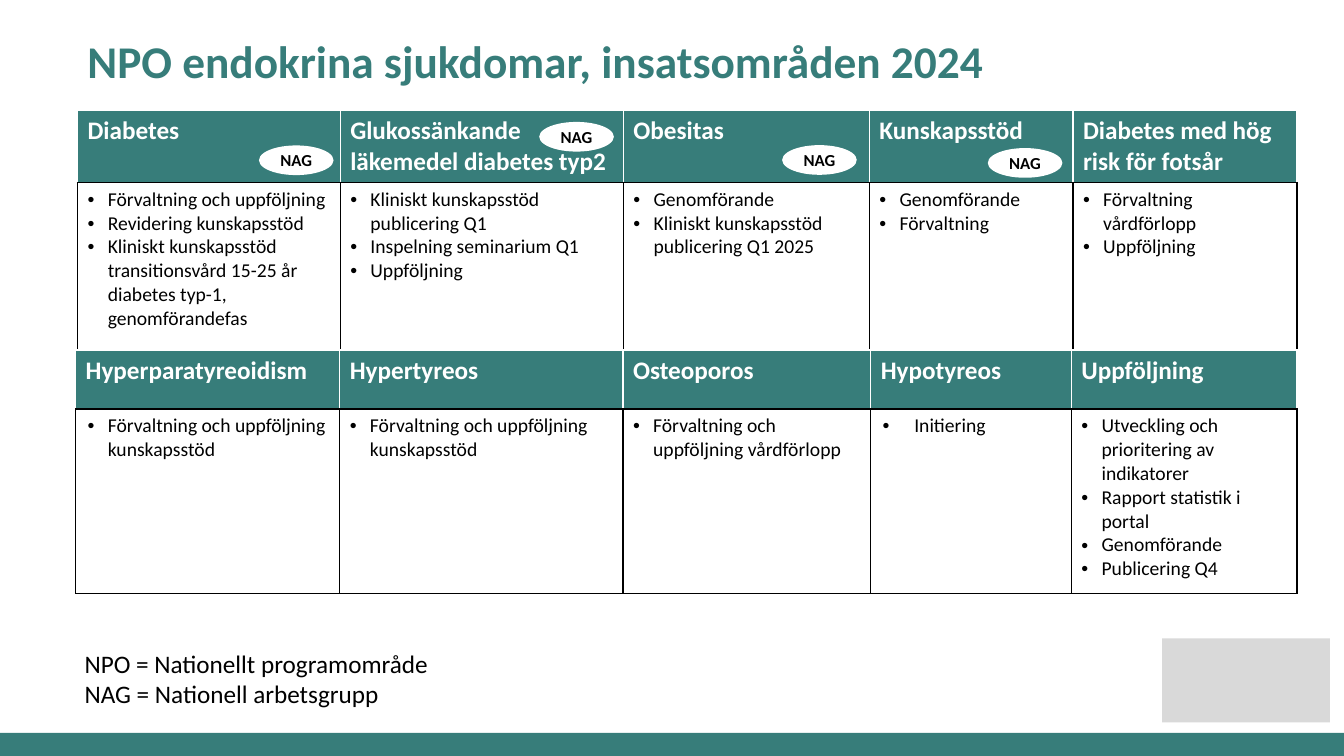
from lxml import etree
from pptx import Presentation
from pptx.dml.color import RGBColor
from pptx.enum.shapes import MSO_SHAPE
from pptx.enum.text import MSO_ANCHOR, PP_ALIGN
from pptx.oxml.ns import qn
from pptx.util import Pt

RECTANGLE, ELLIPSE = MSO_SHAPE.RECTANGLE, MSO_SHAPE.OVAL
MIDDLE, BOTTOM = MSO_ANCHOR.MIDDLE, MSO_ANCHOR.BOTTOM
CENTER = PP_ALIGN.CENTER

FONT = "Calibri"
COLORS = {"teal": "377D7A", "white": "FFFFFF", "black": "000000", "grey": "D9D9D9"}
HEADER_BORDERS = {"L": "white", "R": "white", "T": "white", "B": "black"}
BODY_BORDERS = dict.fromkeys("LRTB", "black")

FORMATS = {
    "title": {"size": Pt(32.4), "bold": True},
    "header": {"size": Pt(18), "bold": True},
    "body": {"size": Pt(14), "bold": False},
    "badge": {"size": Pt(12), "bold": True},
    "legend": {"size": Pt(18), "bold": False},
}

CURRENT_AREAS = {
    "Diabetes": [
        "Förvaltning och uppföljning",
        "Revidering kunskapsstöd",
        "Kliniskt kunskapsstöd transitionsvård 15-25 år diabetes typ-1, genomförandefas",
    ],
    "Glukossänkande läkemedel diabetes typ2": [
        "Kliniskt kunskapsstöd publicering Q1",
        "Inspelning seminarium Q1",
        "Uppföljning",
    ],
    "Obesitas": ["Genomförande", "Kliniskt kunskapsstöd publicering Q1 2025"],
    "Kunskapsstöd": ["Genomförande", "Förvaltning"],
    "Diabetes med hög risk för fotsår": ["Förvaltning vårdförlopp", "Uppföljning"],
}
FURTHER_AREAS = {
    "Hyperparatyreoidism": ["Förvaltning och uppföljning kunskapsstöd"],
    "Hypertyreos": ["Förvaltning och uppföljning kunskapsstöd"],
    "Osteoporos": ["Förvaltning och uppföljning vårdförlopp"],
    "Hypotyreos": ["Initiering"],
    "Uppföljning": [
        "Utveckling och prioritering av indikatorer",
        "Rapport statistik i portal",
        "Genomförande",
        "Publicering Q4",
    ],
}
BADGES = [(385.2, 87.1), (185, 103.9), (558.7, 103.7), (705.6, 105.8)]


def rgb(color):
    """Return the named colour as an RGB value."""
    return RGBColor.from_string(COLORS[color])


def add_bullet(paragraph, indent):
    """Give the paragraph a bullet with a hanging indent in points."""
    properties = paragraph._p.get_or_add_pPr()
    properties.set("marL", str(Pt(indent)))
    properties.set("indent", str(-Pt(indent)))
    etree.SubElement(properties, qn("a:buFont"), typeface="Arial")
    etree.SubElement(properties, qn("a:buChar"), char="•")


def write_lines(text_frame, lines, style, color, indent=0, **paragraph_format):
    """Write one formatted paragraph for each line."""
    for index, line in enumerate(lines):
        paragraph = text_frame.add_paragraph() if index else text_frame.paragraphs[0]
        if indent:
            add_bullet(paragraph, indent)
        for name, value in paragraph_format.items():
            setattr(paragraph, name, value)
        run = paragraph.add_run()
        run.text = line
        for name, value in {"name": FONT, **FORMATS[style]}.items():
            setattr(run.font, name, value)
        run.font.color.rgb = rgb(color)


def add_text(slide, box, lines, style, color, frame_format, **paragraph_format):
    """Add a text box."""
    text_frame = slide.shapes.add_textbox(*map(Pt, box)).text_frame
    for name, value in frame_format.items():
        setattr(text_frame, name, value)
    write_lines(text_frame, lines, style, color, **paragraph_format)


def add_plain_shape(slide, kind, box, color):
    """Add a filled shape without outline or shadow."""
    shape = slide.shapes.add_shape(kind, *map(Pt, box))
    shape.shadow.inherit = False
    shape.fill.solid()
    shape.fill.fore_color.rgb = rgb(color)
    shape.line.fill.background()
    return shape


def add_badge(slide, left, top):
    """Add an oval that marks an area with a working group."""
    badge = add_plain_shape(slide, ELLIPSE, (left, top, 53.3, 21.2), "white")
    badge.text_frame.word_wrap = False
    badge.text_frame.vertical_anchor = MIDDLE
    write_lines(badge.text_frame, ["NAG"], "badge", "black", alignment=CENTER)


def set_borders(cell, borders):
    """Draw the cell's borders, one point wide."""
    properties = cell._tc.get_or_add_tcPr()
    for side, color in borders.items():
        line = etree.SubElement(properties, qn(f"a:ln{side}"), w=str(Pt(1)))
        fill = etree.SubElement(line, qn("a:solidFill"))
        etree.SubElement(fill, qn("a:srgbClr"), val=COLORS[color])


def add_area_table(slide, left, top, widths, heights, areas, indents, wide_margins=()):
    """Add a table with a heading and a bullet list for each area."""
    box = map(Pt, (left, top, sum(widths), sum(heights)))
    table = slide.shapes.add_table(2, len(areas), *box).table
    table.horz_banding = False
    for row, height in zip(table.rows, heights):
        row.height = Pt(height)
    for index, (heading, tasks) in enumerate(areas.items()):
        table.columns[index].width = Pt(widths[index])
        header, body = table.cell(0, index), table.cell(1, index)
        set_borders(header, HEADER_BORDERS)
        header.fill.solid()
        header.fill.fore_color.rgb = rgb("teal")
        write_lines(header.text_frame, [heading], "header", "white")
        set_borders(body, BODY_BORDERS)
        body.fill.background()
        if index in wide_margins:
            body.margin_left = Pt(8.6)
        write_lines(body.text_frame, tasks, "body", "black", indent=indents[index])


def main():
    """Build the slide and save it."""
    presentation = Presentation()
    presentation.slide_width, presentation.slide_height = Pt(960), Pt(540)
    slide = presentation.slides.add_slide(presentation.slide_layouts[6])

    add_plain_shape(slide, RECTANGLE, (0, 523.5, 960, 16.5), "teal")
    add_plain_shape(slide, RECTANGLE, (830, 456, 120, 60), "grey")
    add_area_table(slide, 55.4, 79.2, [187.6, 202.3, 175.7, 145.5, 160], [50.4, 121],
                   CURRENT_AREAS, [14.4] * 5)
    for left, top in BADGES:
        add_badge(slide, left, top)
    add_area_table(slide, 54, 250, [188.7, 202.3, 177, 143.3, 161.2], [42.2, 132],
                   FURTHER_AREAS, [14.4, 14.4, 14.4, 22.5, 14.4], wide_margins=(0, 3))
    add_text(slide, (55.4, 18.7, 720, 48.2),
             ["NPO endokrina sjukdomar, insatsområden 2024"], "title", "teal",
             {"word_wrap": True, "vertical_anchor": BOTTOM}, line_spacing=0.9)
    add_text(slide, (53.3, 459.4, 262.8, 51),
             ["NPO = Nationellt programområde", "NAG = Nationell arbetsgrupp"],
             "legend", "black", {"word_wrap": False})
    presentation.save("out.pptx")


if __name__ == "__main__":
    main()
